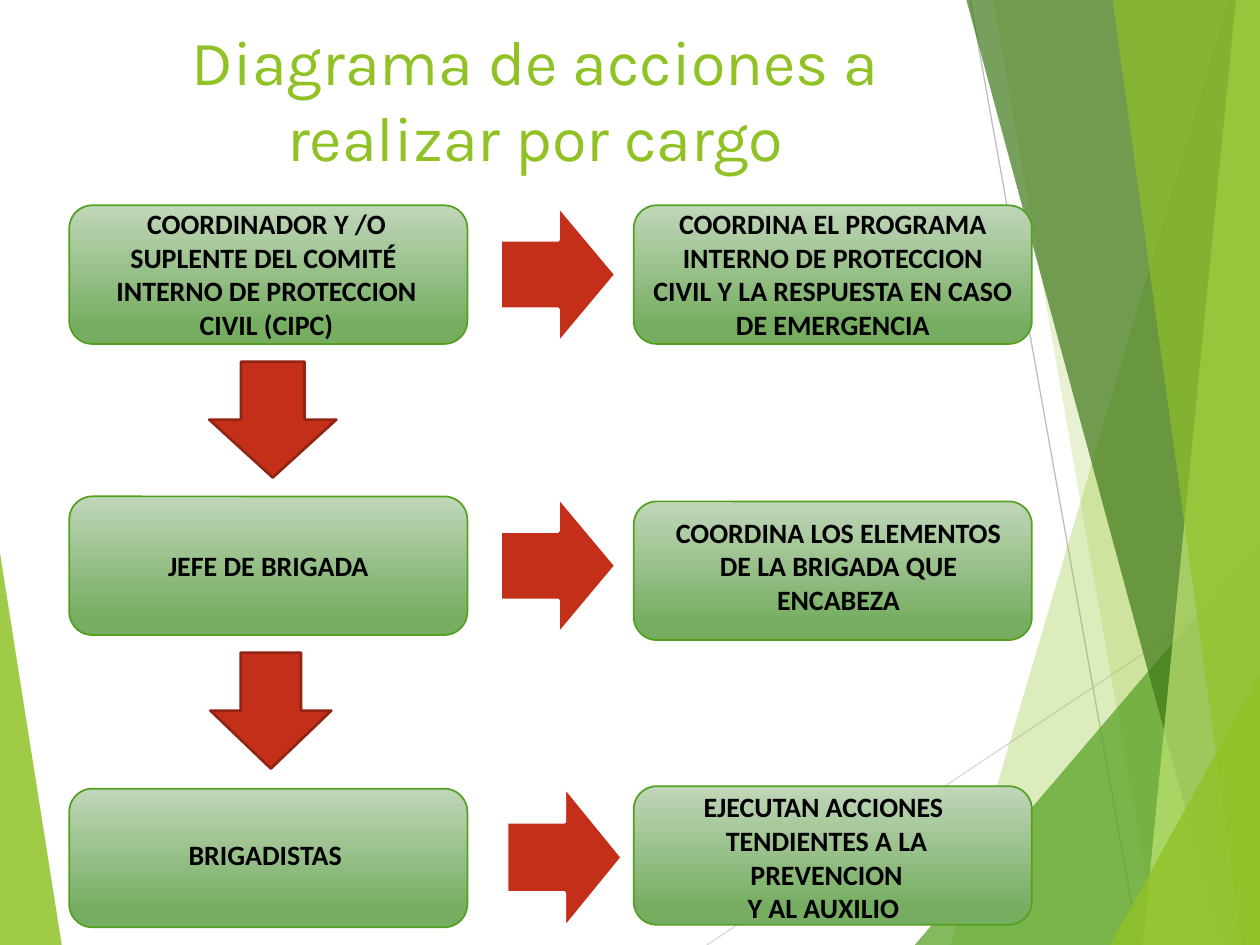
from lxml.etree import SubElement
from pptx import Presentation
from pptx.dml.color import RGBColor
from pptx.enum.shapes import MSO_CONNECTOR, MSO_SHAPE
from pptx.enum.text import MSO_ANCHOR, PP_ALIGN
from pptx.oxml.ns import qn
from pptx.util import Emu, Pt

EMU_PER_PX = 9144  # 100 px to the inch


def px(length):
    return Emu(length * EMU_PER_PX)


def color(hex_string):
    return RGBColor.from_string(hex_string)


class SlideBuilder:
    """Style of the diagram and the slide it is drawn on."""
    lime, green, forest, pale = "90C226", "54A021", "3F7819", "C0E474"
    red, dark_red, white, black = "C42F1A", "912313", "FFFFFF", "000000"
    box_top, box_bottom = "C0D6B9", "76AD61"
    title_font, body_font = "Karla", "Calibri"
    title_size, body_size = 36, 16

    def __init__(self, slide):
        self.slide = slide

    def facet(self, points, fill, opacity):
        builder = self.slide.shapes.build_freeform(*points[0], scale=EMU_PER_PX)
        builder.add_line_segments(points[1:], close=True)
        shape = builder.convert_to_shape()
        shape.shadow.inherit = False
        shape.fill.solid()
        shape.fill.fore_color.rgb = color(fill)
        shape.line.fill.background()
        fill_color = shape._element.spPr.find(qn("a:solidFill"))[0]
        SubElement(fill_color, qn("a:alpha")).set("val", str(opacity * 1000))

    def line(self, start, end, line_color):
        connector = self.slide.shapes.add_connector(
            MSO_CONNECTOR.STRAIGHT, *map(px, start + end))
        connector.line.color.rgb = color(line_color)
        connector.line.width = Pt(0.75)
        SubElement(connector._element.spPr, qn("a:effectLst"))

    def preset(self, kind, area, line_color, line_width):
        shape = self.slide.shapes.add_shape(kind, *map(px, area))
        shape.shadow.inherit = False
        shape.line.color.rgb = color(line_color)
        shape.line.width = Pt(line_width)
        return shape

    def box(self, left, top):
        shape = self.preset(MSO_SHAPE.ROUNDED_RECTANGLE,
                            (left, top, 316, 110), self.green, 1)
        shape.fill.gradient()
        shape.fill.gradient_angle = 270
        stops = ((0, self.box_top), (0.88, self.box_bottom))
        for stop, (position, stop_color) in zip(shape.fill.gradient_stops, stops):
            stop.position = position
            stop.color.rgb = color(stop_color)
        return shape

    def arrow(self, kind, area, line_color, line_width):
        shape = self.preset(kind, area, line_color, line_width)
        shape.fill.solid()
        shape.fill.fore_color.rgb = color(self.red)

    def set_text(self, shape, text, font, size, font_color, bold, anchor):
        frame = shape.text_frame
        frame.word_wrap = True
        frame.vertical_anchor = anchor
        frame.text = text
        for paragraph in frame.paragraphs:
            paragraph.alignment = PP_ALIGN.CENTER
            for run in paragraph.runs:
                run.font.name = font
                run.font.size = Pt(size)
                run.font.bold = bold
                run.font.color.rgb = color(font_color)

    def label(self, shape, text, anchor=MSO_ANCHOR.TOP):
        self.set_text(shape, text, self.body_font, self.body_size,
                      self.black, True, anchor)

    def text_box(self, area):
        return self.slide.shapes.add_textbox(*map(px, area))

    def title(self, area, text):
        self.set_text(self.text_box(area), text, self.title_font,
                      self.title_size, self.lime, False, MSO_ANCHOR.MIDDLE)


def main():
    presentation = Presentation()
    presentation.slide_width, presentation.slide_height = px(1000), px(750)
    slide = presentation.slides.add_slide(presentation.slide_layouts[6])
    builder = SlideBuilder(slide)

    # Faceted background
    builder.facet([(0, 439), (49, 750), (0, 750)], builder.lime, 85)
    builder.line((561, 750), (1000, 457), "D9D9D9")
    builder.line((770, 0), (904, 750), "BFBFBF")
    # Each facet: upper corner, lower corner, fill, opacity
    top_right, bottom_right = (1000, 0), (1000, 750)
    bands = [
        ((975, 0), (754, 750), builder.lime, 30),
        ((788, 0), (919, 750), builder.lime, 20),
        ((1000, 429), (726, 750), builder.green, 72),
        ((767, 0), (970, 750), builder.forest, 70),
        ((981, 0), (907, 750), builder.pale, 70),
        ((883, 0), (986, 750), builder.lime, 65),
        ((1000, 535), (881, 750), builder.lime, 80),
    ]
    for upper, lower, fill, opacity in bands:
        outline = [upper, lower, bottom_right]
        if upper[0] < 1000:
            outline.append(top_right)
        builder.facet(outline, fill, opacity)

    builder.title((78, 6, 694, 144), "Diagrama de acciones a realizar por cargo")

    # Boxes: roles on the left, actions on the right
    roles = [builder.box(55, top) for top in (163, 394, 626)]
    for top in (163, 398, 624):
        builder.box(503, top)
    builder.label(roles[1], "JEFE DE BRIGADA", MSO_ANCHOR.MIDDLE)

    # Arrows from role to action
    for area in ((397, 163, 92, 110), (397, 394, 92, 110), (402, 624, 92, 113)):
        builder.arrow(MSO_SHAPE.RIGHT_ARROW, area, builder.white, 2)

    # Texts laid over the boxes
    texts = [
        ((52, 159, 319, 118), "COORDINADOR Y /O\nSUPLENTE DEL COMITÉ \n"
                              "INTERNO DE PROTECCION\nCIVIL (CIPC)"),
        ((508, 159, 306, 118), "COORDINA EL PROGRAMA\nINTERNO DE PROTECCION "
                               "CIVIL Y LA RESPUESTA EN CASO DE EMERGENCIA"),
        ((78, 660, 265, 37), "BRIGADISTAS"),
        ((514, 404, 303, 91), "COORDINA LOS ELEMENTOS DE LA BRIGADA QUE ENCABEZA"),
        ((515, 622, 282, 118), "EJECUTAN ACCIONES \nTENDIENTES A LA PREVENCION\n"
                               "Y AL AUXILIO "),
    ]
    for area, text in texts:
        builder.label(builder.text_box(area), text)

    # Arrows from role to role
    for area in ((166, 287, 101, 92), (167, 518, 96, 92)):
        builder.arrow(MSO_SHAPE.DOWN_ARROW, area, builder.dark_red, 1.5)

    presentation.save("out.pptx")


if __name__ == "__main__":
    main()
